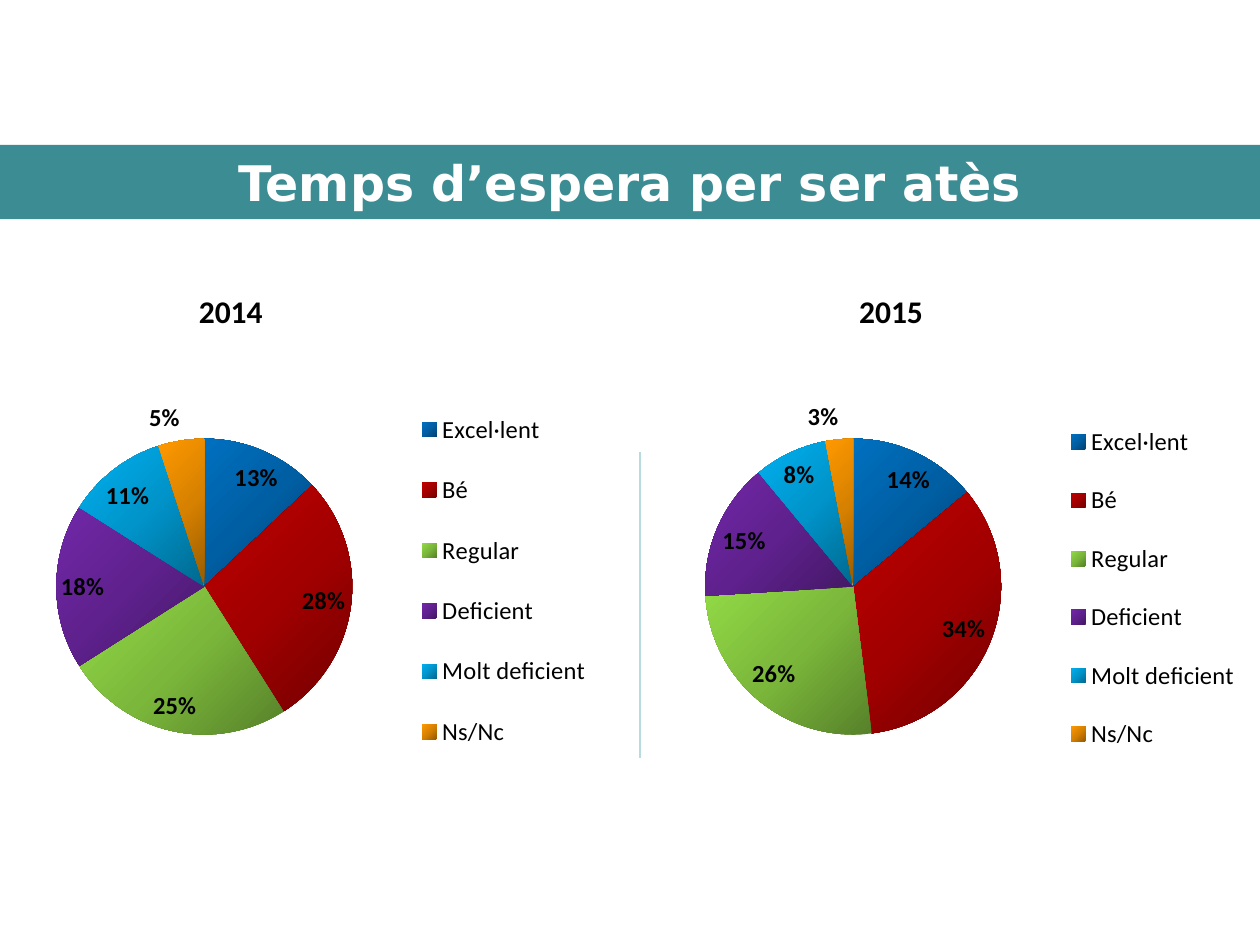
from copy import deepcopy

from lxml import etree
from pptx import Presentation
from pptx.chart.data import CategoryChartData
from pptx.dml.color import RGBColor
from pptx.enum.chart import XL_CHART_TYPE, XL_LABEL_POSITION, XL_LEGEND_POSITION
from pptx.enum.shapes import MSO_CONNECTOR
from pptx.enum.text import MSO_ANCHOR, PP_ALIGN
from pptx.oxml.ns import qn
from pptx.util import Cm, Pt

PIE = XL_CHART_TYPE.PIE
BEST_FIT = XL_LABEL_POSITION.BEST_FIT
RIGHT = XL_LEGEND_POSITION.RIGHT
STRAIGHT = MSO_CONNECTOR.STRAIGHT
MIDDLE = MSO_ANCHOR.MIDDLE
CENTER = PP_ALIGN.CENTER

COLORS = {"band": "3C8C93", "white": "FFFFFF", "black": "000000", "divider": "B6DCDF"}
GRADIENTS = {
    "Excel·lent": ("004272", "005EA2", "0070C0"),
    "Bé": ("720000", "A20000", "C00000"),
    "Regular": ("57812A", "7BB73B", "92DA46"),
    "Deficient": ("431764", "5F218E", "7128A8"),
    "Molt deficient": ("00688E", "0094CA", "00B0F0"),
    "Ns/Nc": ("975B00", "D78100", "FF9900"),
}
TITLE_FONT = {"name": "DejaVu Sans", "size": Pt(28), "bold": True}
YEAR_FONT = {"name": "Calibri", "size": Pt(18), "bold": True}
CHART_FONT = {"name": "Arial", "size": Pt(18)}
LEGEND_FONT = {"name": "Calibri", "size": Pt(14)}
LABEL_FONT = {"name": "Calibri", "size": Pt(14), "bold": True}
PLOT_LAYOUT = {"x": 0.147, "y": 0.114, "w": 0.455, "h": 0.788}


def set_font(font, values, color="black"):
    """Apply a dict of format values and a named colour to a font."""
    for name, value in values.items():
        setattr(font, name, value)
    font.color.rgb = RGBColor.from_string(COLORS[color])


def set_layout(parent, index, values, target=None):
    """Give a chart part a manual layout in fractions of the chart."""
    for old in parent.findall(qn("c:layout")):
        parent.remove(old)
    layout = etree.Element(qn("c:layout"))
    manual = etree.SubElement(layout, qn("c:manualLayout"))
    settings = {"layoutTarget": target} if target else {}
    settings.update(xMode="edge", yMode="edge", **values)
    for name, value in settings.items():
        etree.SubElement(manual, qn(f"c:{name}")).set("val", str(value))
    parent.insert(index, layout)


def fill_gradient(fill, colors):
    """Fill a slice with three evenly spaced gradient stops."""
    fill.gradient()
    fill.gradient_angle = 135
    first = fill.gradient_stops[0]._gs
    first.addnext(deepcopy(first))
    for i, (stop, color) in enumerate(zip(fill.gradient_stops, colors)):
        stop.position = i / 2
        stop.color.rgb = RGBColor.from_string(color)


def add_title(s, box, text):
    """Turn the title placeholder into a coloured band."""
    sp = s.shapes.title
    sp.left, sp.top, sp.width, sp.height = map(Cm, box)
    sp.fill.solid()
    sp.fill.fore_color.rgb = RGBColor.from_string(COLORS["band"])
    tf = sp.text_frame
    tf.vertical_anchor = MIDDLE
    p = tf.paragraphs[0]
    p.alignment = CENTER
    r = p.add_run()
    r.text = text
    set_font(r.font, TITLE_FONT, "white")


def add_year_panel(s, box, year, year_offset, values, legend_layout):
    """Place one year's pie chart and its heading in the given box."""
    left, top, width, height = box
    data = CategoryChartData()
    data.categories = list(GRADIENTS)
    data.add_series("Series 1", values)
    chart = s.shapes.add_chart(PIE, *map(Cm, box), data).chart
    chart.has_title = False
    set_font(chart.font, CHART_FONT)

    chart.has_legend = True
    chart.legend.position = RIGHT
    chart.legend.include_in_layout = False
    set_font(chart.legend.font, LEGEND_FONT)
    set_layout(chart.legend._element, 1, legend_layout)

    plot = chart.plots[0]
    plot.vary_by_categories = True
    set_layout(plot._element.getparent(), 0, PLOT_LAYOUT, "inner")
    for i, colors in enumerate(GRADIENTS.values()):
        fill_gradient(plot.series[0].points[i].format.fill, colors)

    plot.has_data_labels = True
    labels = plot.data_labels
    labels.show_percentage = True
    labels.show_value = False
    labels.number_format = "0%"
    labels.number_format_is_linked = False
    labels.position = BEST_FIT
    set_font(labels.font, LABEL_FONT)

    sp = s.shapes.add_textbox(Cm(left + year_offset), Cm(top + 1.4), Cm(4.37), Cm(1.19))
    sp.text_frame.word_wrap = True
    r = sp.text_frame.paragraphs[0].add_run()
    r.text = year
    set_font(r.font, YEAR_FONT)


def add_divider(s, box):
    """Draw the vertical rule down the left side of the box."""
    left, top, width, height = box
    line = s.shapes.add_connector(STRAIGHT, Cm(left), Cm(top), Cm(left + width), Cm(top + height))
    line.line.color.rgb = RGBColor.from_string(COLORS["divider"])
    line.line.width = Pt(0.75)
    etree.SubElement(line._element.spPr, qn("a:effectLst"))


def main():
    """Build and save the slide."""
    prs = Presentation()
    prs.slide_width, prs.slide_height = Cm(25.4), Cm(19.05)
    s = prs.slides.add_slide(prs.slide_layouts[5])
    add_title(s, (0, 2.92, 25.4, 1.5), "Temps d’espera per ser atès")
    add_year_panel(s, (-0.79, 4.37, 13.11, 14.68), "2014", 4.55, (13, 28, 25, 18, 11, 5),
                   {"x": 0.69, "y": 0.23, "w": 0.29, "h": 0.54})
    add_year_panel(s, (12.29, 4.37, 13.11, 14.68), "2015", 4.78, (14, 34, 26, 15, 8, 3),
                   {"x": 0.69, "y": 0.25, "w": 0.29, "h": 0.52})
    add_divider(s, (12.9, 9.12, 0, 6.17))
    prs.save("out.pptx")


if __name__ == "__main__":
    main()
